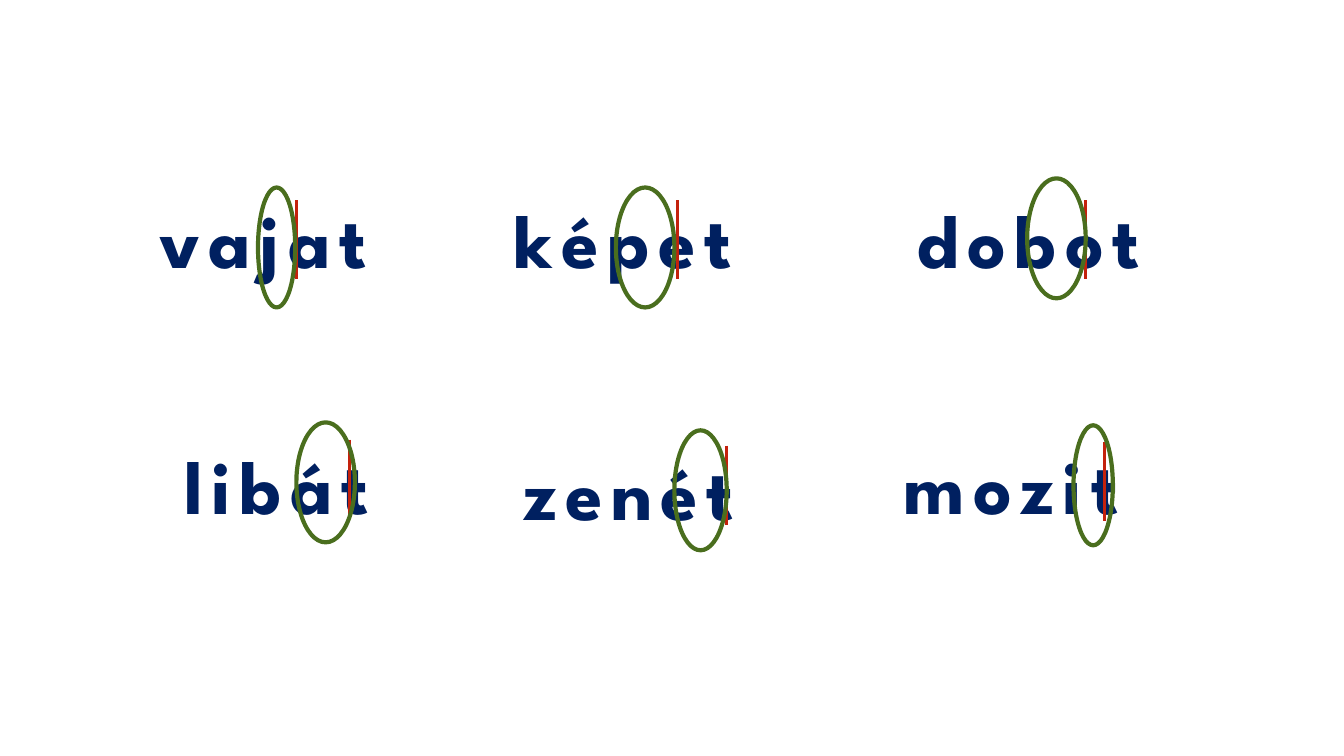
from typing import NamedTuple

from lxml import etree
from pptx import Presentation
from pptx.dml.color import RGBColor
from pptx.enum.shapes import MSO_CONNECTOR as Connector, MSO_SHAPE as Shape
from pptx.enum.text import MSO_AUTO_SIZE as AutoSize
from pptx.oxml.ns import qn
from pptx.util import Pt

NAVY = RGBColor(0x00, 0x20, 0x60)
RED = RGBColor(0xC4, 0x22, 0x0D)
GREEN = RGBColor(0x4A, 0x6E, 0x1E)

FONT = "League Spartan"
WORD_HEIGHT = 72.7
DIVIDER_LENGTH = 56.5
RING_HEIGHT = 85.7


class Word(NamedTuple):
    text: str
    box: tuple      # left, top, width
    divider: tuple  # x, top
    ring: tuple     # left, top, width


WORDS = [
    Word("vajat", (106.6, 133.9, 177.8), (211.7, 143.1), (184.3, 133.9, 26.6)),
    Word("képet", (360.7, 133.9, 198.7), (483.8, 143.1), (439.9, 133.9, 41.8)),
    Word("dobot", (648, 133.9, 203), (775.4, 143.1), (733.7, 127.4, 41.8)),
    Word("libát", (124.6, 310.3, 159.1), (249.8, 314), (211.7, 301.7, 41.8)),
    Word("zenét", (366.5, 313.9, 188.6), (519.1, 318.4), (481.7, 307.4, 37.4)),
    Word("mozit", (638.6, 310.3, 185.8), (789.1, 316), (766.8, 303.8, 28.1)),
]


def add_text(slide, text, left, top, width, height, *, size, color, spacing, bold=False):
    """Add one unwrapped line; spacing is the letter spacing in points."""
    box = slide.shapes.add_textbox(Pt(left), Pt(top), Pt(width), Pt(height))
    frame = box.text_frame
    frame.word_wrap = False
    frame.auto_size = AutoSize.SHAPE_TO_FIT_TEXT
    run = frame.paragraphs[0].add_run()
    run.text = text
    run.font.name = FONT
    run.font.size = Pt(size)
    run.font.bold = bold
    run.font.color.rgb = color
    run.font._element.set("spc", str(spacing * 100))


def add_divider(slide, x, top):
    line = slide.shapes.add_connector(
        Connector.STRAIGHT, Pt(x), Pt(top), Pt(x), Pt(top + DIVIDER_LENGTH))
    line.line.color.rgb = RED
    line.line.width = Pt(2.25)
    etree.SubElement(line._element.spPr, qn("a:effectLst"))


def add_ring(slide, left, top, width):
    ring = slide.shapes.add_shape(
        Shape.OVAL, Pt(left), Pt(top), Pt(width), Pt(RING_HEIGHT))
    ring.shadow.inherit = False
    ring.fill.background()
    ring.line.color.rgb = GREEN
    ring.line.width = Pt(3)


def main():
    presentation = Presentation()
    presentation.slide_width = Pt(960)
    presentation.slide_height = Pt(540)
    blank_layout = presentation.slide_layouts[6]
    slide = presentation.slides.add_slide(blank_layout)
    for word in WORDS:
        add_text(slide, word.text, *word.box, WORD_HEIGHT,
                 size=54, color=NAVY, spacing=6, bold=True)
        add_divider(slide, *word.divider)
        add_ring(slide, *word.ring)
    presentation.save("out.pptx")


if __name__ == "__main__":
    main()
